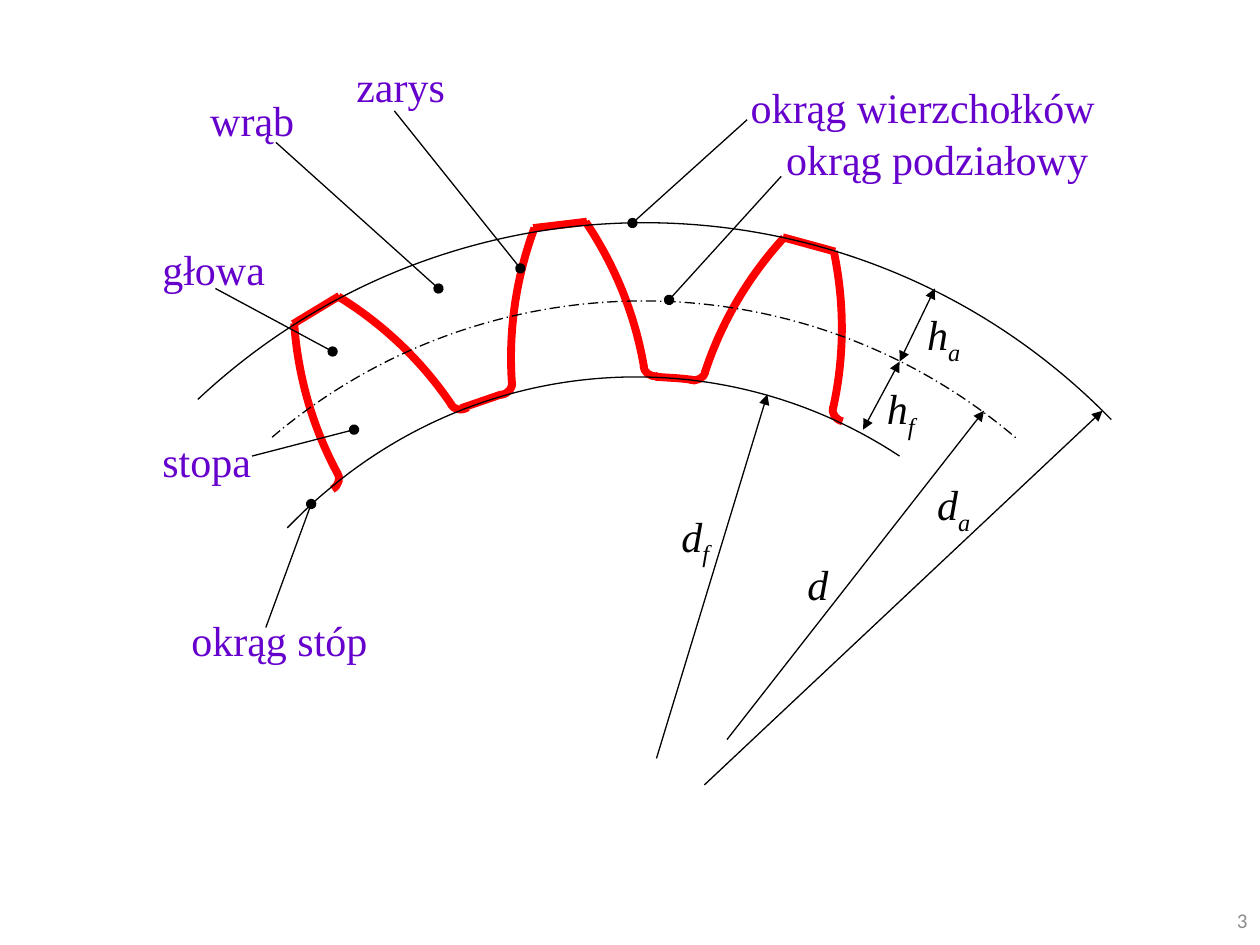
from math import cos, radians, sin

from pptx import Presentation
from pptx.dml.color import RGBColor
from pptx.enum.dml import MSO_LINE
from pptx.enum.shapes import MSO_CONNECTOR
from pptx.enum.text import MSO_ANCHOR, PP_ALIGN
from pptx.oxml.ns import qn
from pptx.oxml.xmlchemy import OxmlElement
from pptx.util import Inches, Pt

COLUMNS, ROWS = 100, 75
BLACK, RED, VIOLET, GREY = "000000", "FF0000", "6600CC", "8C8C8C"
THIN, THICK = 0.75, 4.5


def color(hex_code):
    return RGBColor.from_string(hex_code)


def write(box, text, subscript="", font="Times New Roman", size=24, ink=VIOLET,
          italic=False, align=PP_ALIGN.LEFT, space_after=10):
    para = box.text_frame.paragraphs[0]
    para.alignment = align
    para.space_after = Pt(space_after)
    for part in filter(None, (text, subscript)):
        span = para.add_run()
        span.text = part
        span.font.name = font
        span.font.size = Pt(size)
        span.font.italic = italic
        span.font.color.rgb = color(ink)
    if subscript:
        span.font._element.set("baseline", "-25000")


class GearPage:
    """Draws on one slide; every length counts columns and rows of the grid."""

    def __init__(self, deck):
        self.page = deck.slides.add_slide(deck.slide_layouts[6])
        self.column = deck.slide_width / COLUMNS
        self.row = deck.slide_height / ROWS

    def place(self, x, y):
        return round(x * self.column), round(y * self.row)

    def stroke(self, shape, ink, width, dash=None):
        shape.line.color.rgb = color(ink)
        shape.line.width = Pt(width)
        if dash:
            shape.line.dash_style = dash

    def text(self, at, words, anchor=MSO_ANCHOR.TOP, **style):
        left, top, width, height = at
        box = self.page.shapes.add_textbox(
            *self.place(left, top), *self.place(width, height))
        box.text_frame.word_wrap = True
        box.text_frame.vertical_anchor = anchor
        write(box, words, **style)

    def line(self, start, end, ink=BLACK, width=THIN, head=None, tail=None):
        line = self.page.shapes.add_connector(
            MSO_CONNECTOR.STRAIGHT, *self.place(*start), *self.place(*end))
        self.stroke(line, ink, width)
        for tag, kind in (("a:headEnd", head), ("a:tailEnd", tail)):
            if kind:
                arrowhead = OxmlElement(tag)
                arrowhead.set("type", kind)
                line.line._get_or_add_ln().append(arrowhead)
        line.element.spPr.append(OxmlElement("a:effectLst"))

    def curve(self, start, *points, ink=BLACK, width=THIN, dash=None):
        """Cubic Bézier curve: each three points are two controls and an end."""
        builder = self.page.shapes.build_freeform(*self.place(*start))
        builder.add_line_segments([self.place(*p) for p in points], close=False)
        shape = builder.convert_to_shape()
        segments = list(shape.element.iter(qn("a:lnTo")))
        for first in range(0, len(segments), 3):
            bezier = OxmlElement("a:cubicBezTo")
            segments[first].addprevious(bezier)
            for segment in segments[first:first + 3]:
                bezier.append(segment[0])
                segment.getparent().remove(segment)
        shape.fill.background()
        shape.shadow.inherit = False
        self.stroke(shape, ink, width, dash)

    def tooth(self, tip_x, tip_y, degrees):
        """Symmetric tooth, turned clockwise about the middle of its tip."""
        flank = [(2.05, 0), (3.94, 3.69), (5.07, 7.75), (5.28, 12)]
        fillet = [(5.25, 11.9), (5.22, 12.4), (5.67, 12.86), (6.28, 12.84)]
        c, s = cos(radians(degrees)), sin(radians(degrees))

        def turn(x, y):
            return tip_x + x * c - y * s, tip_y + x * s + y * c

        for outline in (flank, fillet):
            for side in (-1, 1):
                self.curve(*(turn(side * x, y) for x, y in outline),
                           ink=RED, width=THICK)
        self.line(turn(-2.15, 0), turn(2.15, 0), ink=RED, width=THICK)


def main():
    deck = Presentation()
    deck.slide_width, deck.slide_height = Inches(10), Inches(7.5)
    gear = GearPage(deck)

    gear.text((92.5, 71, 7.5, 4), "3", anchor=MSO_ANCHOR.MIDDLE, font="Calibri",
              size=12, ink=GREY, align=PP_ALIGN.RIGHT, space_after=0)

    for tip_x, tip_y, degrees in ((44.45, 17.85, -6.8), (25.1, 24.6, -31.2),
                                  (64.2, 19.4, 15.3)):
        gear.tooth(tip_x, tip_y, degrees)

    # Pitch circle, roots between the teeth, root circle, tip circle
    gear.curve((21.6, 34.7), (38.7, 20.2), (63.8, 20.3), (80.8, 34.9),
               dash=MSO_LINE.LONG_DASH_DOT)
    gear.line((36.6, 32.4), (39.8, 31.3), ink=RED, width=THICK)
    gear.curve((52, 29.9), (53.1, 30), (54.2, 30), (55.2, 30.2),
               ink=RED, width=THICK, dash=MSO_LINE.LONG_DASH_DOT)
    gear.curve((22.8, 41.9), (23.8, 40.9), (24.8, 39.9), (25.9, 39),
               (38.8, 28), (57.3, 26.9), (71.4, 36.2))
    gear.curve((15.7, 31.7), (36.3, 12.4), (68.5, 13.1), (88.2, 33.3))

    # Part names, each with a leader from a dot on the part
    labels = [
        ("głowa", (11.9, 18.8, 11.4, 5.2), (26.4, 27.9), (17.1, 22.9)),
        ("stopa", (11.9, 34.1, 10, 5.2), (28.1, 34.1), (20, 36.2)),
        ("zarys", (27.3, 4.3, 9.9, 5.2), (41.3, 21.3), (31.3, 8.8)),
        ("wrąb", (15.7, 7, 9, 5.3), (34.8, 22.9), (21.9, 11.3)),
        ("okrąg podziałowy", (61.4, 10.1, 28.3, 5.3), (53.1, 23.8), (62, 14)),
        ("okrąg wierzchołków", (58.6, 6, 32.5, 6.4), (50.2, 17.7), (59.3, 9.5)),
        ("okrąg stóp", (14.2, 48.3, 16.8, 6.4), (24.7, 40), (21.1, 49.8)),
    ]
    for name, at, dot, end in labels:
        gear.text(at, name)
        gear.line(dot, end, head="oval")

    # Heights have two arrowheads, diameters one
    dimensions = [
        ("h", "a", (72.6, 24, 5.6, 5.3), (74.2, 22.9), (71.4, 28.7)),
        ("h", "f", (69.4, 29.9, 5.6, 5.3), (71.4, 28.7), (68.5, 34.1)),
        ("d", "f", (53.1, 40, 5.4, 5.7), (52.1, 60.2), (60.9, 31.3)),
        ("d", "", (63.1, 43.8, 4.9, 4.5), (57.7, 58.7), (78.1, 32.6)),
        ("d", "a", (73.4, 37.5, 6, 4.5), (55.9, 62.3), (87.5, 32.6)),
    ]
    for symbol, subscript, at, start, end in dimensions:
        gear.line(start, end, head="triangle" if symbol == "h" else None,
                  tail="triangle")
        gear.text(at, symbol, subscript=subscript, ink=BLACK, italic=True)

    deck.save("out.pptx")


if __name__ == "__main__":
    main()
